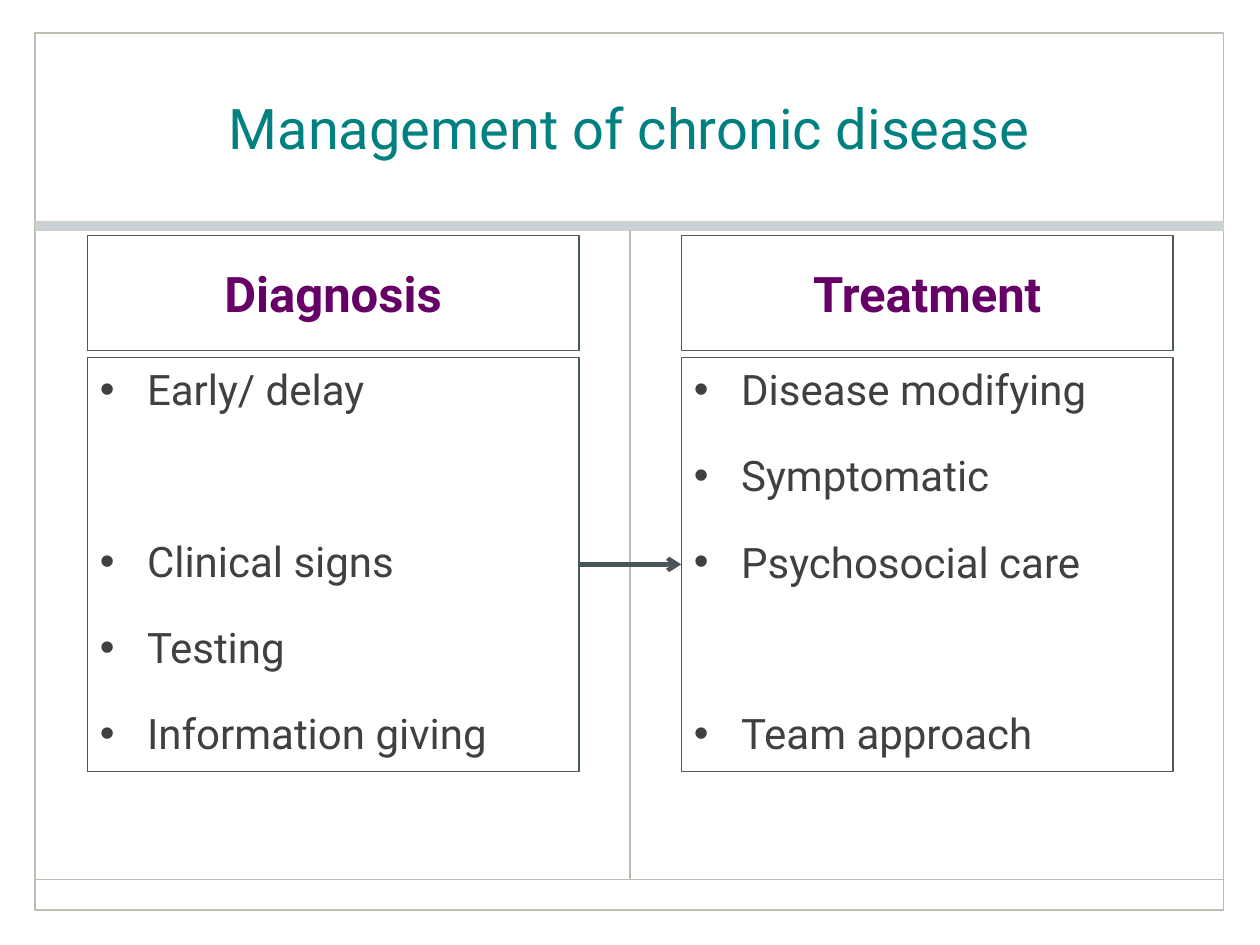
"""Build a slide that sets diagnosis beside treatment in chronic disease."""
import dataclasses

import lxml.etree
import pptx
import pptx.dml.color
import pptx.enum.shapes
import pptx.enum.text
import pptx.oxml.ns
import pptx.util

Pt = pptx.util.Pt
ALIGN = pptx.enum.text.PP_ALIGN
ANCHOR = pptx.enum.text.MSO_ANCHOR
HUES = {
    "frame": "BEBDB2",
    "band": "CBD2D5",
    "edge": "D1D0C8",
    "title": "008080",
    "head": "660066",
    "text": "404040",
    "box": "4B5A60",
    "arrow": "48565C",
}
FONT = "Roboto"
LEFT, TOP, WIDE, HIGH = 20.2, 18.9, 679, 501
RIGHT, MID, BASE = LEFT + WIDE, 360, 502.6
BAND_TOP, BAND_HIGH = 126.3, 5.1
BOX_WIDE = 281
HEAD_TOP, HEAD_HIGH = 134.6, 65.7
LIST_TOP, LIST_HIGH = 204.2, 236.6
INDENT, GAP, WIDE_GAP = 27, 20.5, 69.3


@dataclasses.dataclass(frozen=True)
class Column:
    left: float
    head: str
    items: tuple[str, ...]
    break_at: int


COLUMNS = (
    Column(49.8, "Diagnosis",
           ("Early/ delay", "Clinical signs", "Testing", "Information giving"), 1),
    Column(389.3, "Treatment",
           ("Disease modifying", "Symptomatic", "Psychosocial care", "Team approach"), 3),
)


def color(name: str) -> pptx.dml.color.RGBColor:
    """Look up a colour by its role."""
    return pptx.dml.color.RGBColor.from_string(HUES[name])


def outline(line, hue: str, width: float) -> None:
    """Give a line its colour and width."""
    line.color.rgb = color(hue)
    line.width = Pt(width)


def place(shape, left: float, top: float, wide: float, high: float) -> None:
    """Move and size a shape."""
    shape.left, shape.top = Pt(left), Pt(top)
    shape.width, shape.height = Pt(wide), Pt(high)


def add_bullet(para) -> None:
    """Give a paragraph a hanging round bullet."""
    props = para._p.get_or_add_pPr()
    props.set("marL", str(Pt(INDENT)))
    props.set("indent", str(-Pt(INDENT)))
    qn = pptx.oxml.ns.qn
    tint = lxml.etree.SubElement(props, qn("a:buClr"))
    lxml.etree.SubElement(tint, qn("a:srgbClr"), val=HUES["text"])
    lxml.etree.SubElement(props, qn("a:buFont"), typeface="Arial")
    lxml.etree.SubElement(props, qn("a:buChar"), char="•")


def write(para, text: str, *, size: float, hue: str, bold: bool = False,
          align=ALIGN.LEFT, before: float = 0, bullet: bool = False) -> None:
    """Write text in a paragraph with its format."""
    if bullet:
        add_bullet(para)
    para.alignment = align
    para.space_before = Pt(before)
    run = para.add_run()
    run.text = text
    run.font.name = FONT
    run.font.size = Pt(size)
    run.font.bold = bold
    run.font.color.rgb = color(hue)


def set_frame(shape, anchor):
    """Fix the wrap and anchor of a text frame and return it."""
    frame = shape.text_frame
    frame.word_wrap = True
    frame.auto_size = pptx.enum.text.MSO_AUTO_SIZE.NONE
    frame.vertical_anchor = anchor
    return frame


def add_block(slide, left: float, top: float, wide: float, high: float):
    """Add a plain rectangle without fill."""
    block = slide.shapes.add_shape(
        pptx.enum.shapes.MSO_SHAPE.RECTANGLE, Pt(left), Pt(top), Pt(wide), Pt(high))
    block.shadow.inherit = False
    block.fill.background()
    return block


def add_rule(slide, start: tuple[float, float], end: tuple[float, float],
             hue: str, width: float, arrow: bool = False) -> None:
    """Add a straight line, with an arrowhead if asked."""
    rule = slide.shapes.add_connector(
        pptx.enum.shapes.MSO_CONNECTOR.STRAIGHT,
        Pt(start[0]), Pt(start[1]), Pt(end[0]), Pt(end[1]))
    outline(rule.line, hue, width)
    qn = pptx.oxml.ns.qn
    if arrow:
        lxml.etree.SubElement(rule.line._get_or_add_ln(), qn("a:tailEnd"), type="arrow")
    lxml.etree.SubElement(rule._element.spPr, qn("a:effectLst"))


def add_frame(slide) -> None:
    """Draw the page frame, the band and the rules."""
    outline(add_block(slide, LEFT, TOP, WIDE, HIGH).line, "frame", 1)
    add_rule(slide, (LEFT, BASE), (RIGHT, BASE), "frame", 1)
    band = add_block(slide, LEFT, BAND_TOP, WIDE, BAND_HIGH)
    band.fill.solid()
    band.fill.fore_color.rgb = color("band")
    outline(band.line, "edge", 0.25)
    add_rule(slide, (MID, BAND_TOP + BAND_HIGH), (MID, BASE), "frame", 1)


def fill_column(column: Column, head, body) -> None:
    """Fill the heading box and the list box of a column."""
    place(head, column.left, HEAD_TOP, BOX_WIDE, HEAD_HIGH)
    place(body, column.left, LIST_TOP, BOX_WIDE, LIST_HIGH)
    for box in (head, body):
        outline(box.line, "box", 0.75)
    frame = set_frame(head, ANCHOR.MIDDLE)
    write(frame.paragraphs[0], column.head, size=28, hue="head", bold=True,
          align=ALIGN.CENTER)
    frame = set_frame(body, ANCHOR.TOP)
    for index, item in enumerate(column.items):
        para = frame.add_paragraph() if index else frame.paragraphs[0]
        before = WIDE_GAP if index == column.break_at else GAP
        write(para, item, size=24, hue="text", bullet=True,
              before=before if index else 0)


def main() -> None:
    """Build and save the slide."""
    deck = pptx.Presentation()
    deck.slide_width, deck.slide_height = Pt(720), Pt(540)
    slide = deck.slides.add_slide(deck.slide_layouts.get_by_name("Comparison"))
    add_frame(slide)
    title, *boxes = slide.placeholders
    place(title, 70.6, 19.4, 578, 106)
    write(set_frame(title, ANCHOR.MIDDLE).paragraphs[0], "Management of chronic disease",
          size=32, hue="title", align=ALIGN.CENTER)
    for column, head, body in zip(COLUMNS, boxes[::2], boxes[1::2]):
        fill_column(column, head, body)
    level = LIST_TOP + LIST_HIGH / 2
    add_rule(slide, (COLUMNS[0].left + BOX_WIDE, level), (COLUMNS[1].left, level),
             "arrow", 2.5, arrow=True)
    deck.save("out.pptx")


if __name__ == "__main__":
    main()
